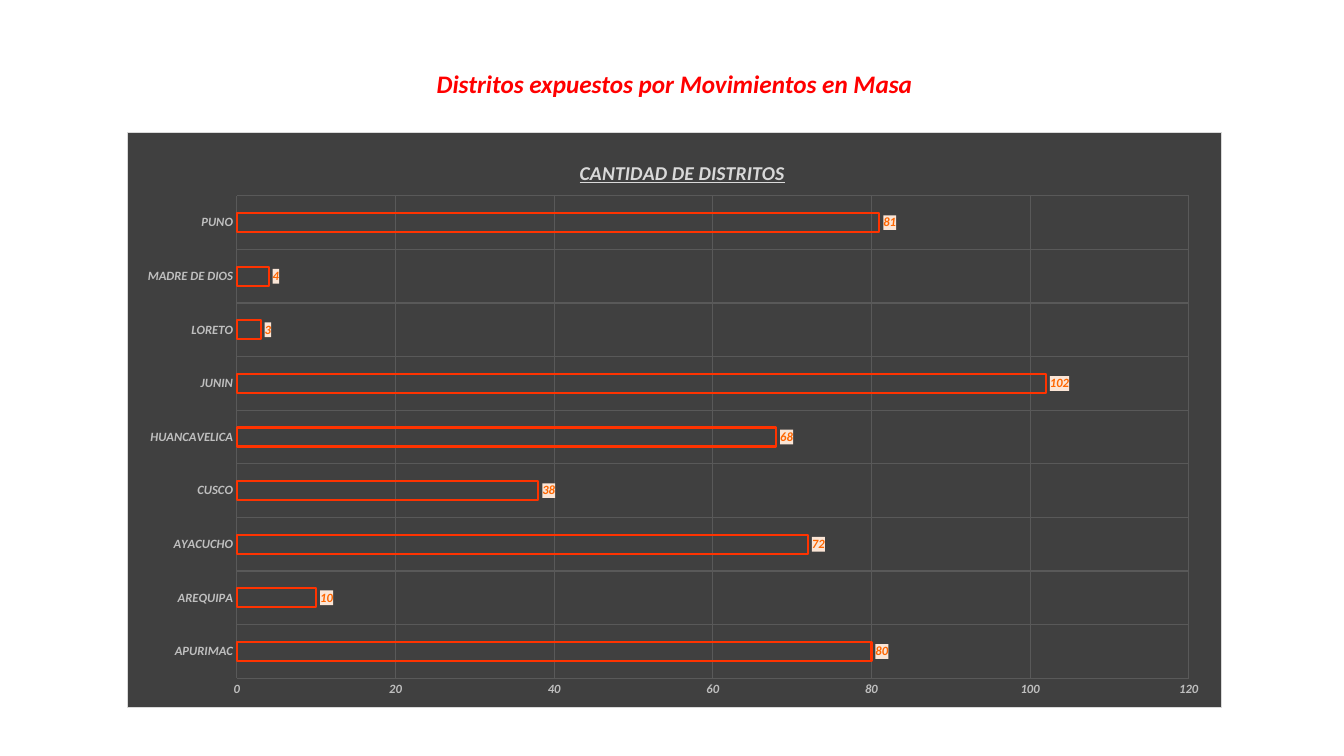
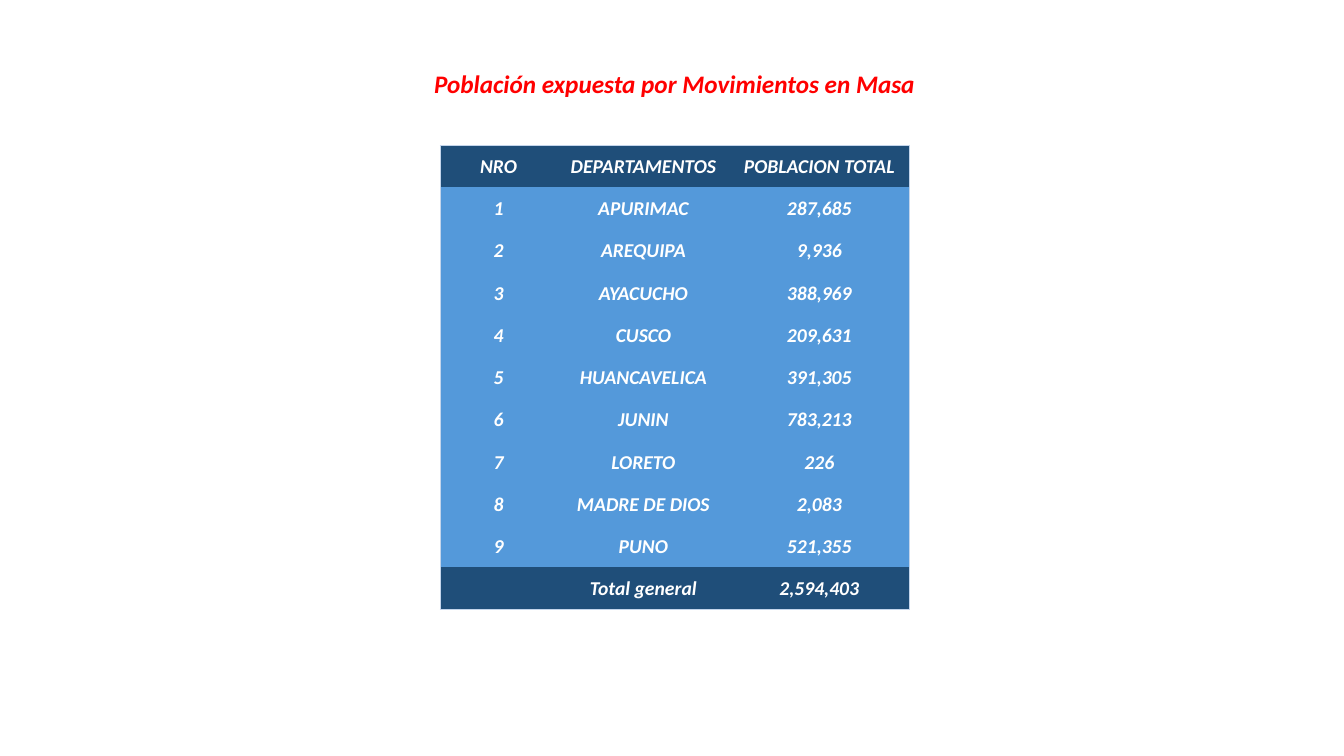
from lxml import etree
from pptx import Presentation
from pptx.chart.data import CategoryChartData
from pptx.dml.color import RGBColor
from pptx.enum.chart import XL_CHART_TYPE, XL_LABEL_POSITION, XL_TICK_MARK
from pptx.enum.text import MSO_ANCHOR, MSO_AUTO_SIZE, PP_ALIGN
from pptx.oxml import parse_xml
from pptx.oxml.ns import nsdecls, qn
from pptx.util import Cm, Pt

BAR = XL_CHART_TYPE.BAR_CLUSTERED
OUTSIDE = XL_LABEL_POSITION.OUTSIDE_END
NO_TICK = XL_TICK_MARK.NONE
MIDDLE = MSO_ANCHOR.MIDDLE
FIT_SHAPE = MSO_AUTO_SIZE.SHAPE_TO_FIT_TEXT
CENTER = PP_ALIGN.CENTER

FONT = "Calibri"
COLORS = {
    "title": "FF0000", "panel": "404040", "panel_line": "D9D9D9",
    "grid": "595959", "axis": "BFBFBF", "bar": "FF3300",
    "label": "FF6600", "label_fill": "FBE5D6", "band": "1F4E79",
    "body": "5499DA", "border": "C4D5EB", "white": "FFFFFF",
}
MID_X = 17.0

DEPARTMENTS = [
    ("APURIMAC", 80, "287,685"),
    ("AREQUIPA", 10, "9,936"),
    ("AYACUCHO", 72, "388,969"),
    ("CUSCO", 38, "209,631"),
    ("HUANCAVELICA", 68, "391,305"),
    ("JUNIN", 102, "783,213"),
    ("LORETO", 3, "226"),
    ("MADRE DE DIOS", 4, "2,083"),
    ("PUNO", 81, "521,355"),
]


def rgb(name):
    """Return the palette colour with this name."""
    return RGBColor.from_string(COLORS[name])


def style_font(font, size, color, underline=None):
    """Apply the shared bold italic face to a font."""
    font.name, font.size = FONT, Pt(size)
    font.bold = font.italic = True
    font.underline = underline
    font.color.rgb = rgb(color)


def write(tf, text, size=14, color="white", underline=None):
    """Write one centred line into a text frame."""
    p = tf.paragraphs[0]
    p.alignment = CENTER
    if text:
        r = p.add_run()
        r.text = text
        style_font(r.font, size, color, underline)


def add_title(s, text, top=1.6, width=12.7, height=1.02):
    """Place the slide title around the common centre line."""
    box = s.shapes.add_textbox(Cm(MID_X - width / 2), Cm(top), Cm(width), Cm(height))
    tf = box.text_frame
    tf.word_wrap = False
    tf.auto_size = FIT_SHAPE
    write(tf, text, size=18, color="title")


def fill_xml(color):
    """Return a solid fill element as text."""
    return f'<a:solidFill><a:srgbClr val="{COLORS[color]}"/></a:solidFill>'


def chart_sppr(fill, line=None):
    """Build the shape properties of a chart part."""
    inner = f'<a:ln w="9525">{fill_xml(line)}</a:ln>' if line else "<a:ln><a:noFill/></a:ln>"
    return parse_xml(f'<c:spPr {nsdecls("c", "a")}>{fill_xml(fill)}{inner}</c:spPr>')


def manual_layout(x, y, w=None, h=None):
    """Build a layout given in fractions of the chart."""
    layout = etree.Element(qn("c:layout"))
    manual = etree.SubElement(layout, qn("c:manualLayout"))
    values = [("xMode", "edge"), ("yMode", "edge"), ("x", x), ("y", y)]
    if w:
        values = [("layoutTarget", "inner")] + values + [("w", w), ("h", h)]
    for tag, value in values:
        etree.SubElement(manual, qn(f"c:{tag}")).set("val", str(value))
    return layout


def style_axis(axis):
    """Give an axis its grid, hidden line and text."""
    axis.has_major_gridlines = True
    grid = axis.major_gridlines.format.line
    grid.width = Pt(0.75)
    grid.color.rgb = rgb("grid")
    axis.major_tick_mark = axis.minor_tick_mark = NO_TICK
    axis.format.line.fill.background()
    style_font(axis.tick_labels.font, 9, "axis")


def style_labels(plot):
    """Show values beyond the bar ends on a pale fill."""
    plot.has_data_labels = True
    labels = plot.data_labels
    labels.show_value = True
    labels.number_format, labels.number_format_is_linked = "#,##0", False
    labels.position = OUTSIDE
    style_font(labels.font, 9, "label")
    num_fmt = plot._element.find(qn("c:dLbls")).find(qn("c:numFmt"))
    num_fmt.addnext(chart_sppr("label_fill"))


def add_district_chart(s, top=3.33, width=27.6, height=14.5):
    """Place the bar chart of districts on its dark panel."""
    data = CategoryChartData(number_format="#,##0")
    data.categories = [name for name, _, _ in DEPARTMENTS]
    data.add_series("Series 1", [count for _, count, _ in DEPARTMENTS])
    chart = s.shapes.add_chart(
        BAR, Cm(MID_X - width / 2), Cm(top), Cm(width), Cm(height), data).chart
    chart.has_legend = False
    chart.font.name, chart.font.size = FONT, Pt(10)
    chart.has_title = True
    write(chart.chart_title.text_frame, "CANTIDAD DE DISTRITOS",
          color="panel_line", underline=True)
    chart.chart_title.include_in_layout = False

    root = chart._chartSpace.find(qn("c:chart"))
    root.addnext(chart_sppr("panel", "panel_line"))
    for tag, layout in (("title", manual_layout(0.41, 0.04)),
                        ("plotArea", manual_layout(0.1, 0.11, 0.87, 0.84))):
        part = root.find(qn(f"c:{tag}"))
        for old in part.findall(qn("c:layout")):
            part.remove(old)
        part.insert(1 if tag == "title" else 0, layout)

    style_axis(chart.category_axis)
    axis = chart.value_axis
    style_axis(axis)
    axis.minimum_scale, axis.maximum_scale, axis.major_unit = 0, 120, 20
    axis.tick_labels.number_format = "#,##0"
    axis.tick_labels.number_format_is_linked = False

    plot = chart.plots[0]
    plot.gap_width, plot.overlap, plot.vary_by_categories = 182, -50, False
    bars = plot.series[0].format
    bars.fill.background()
    bars.line.width = Pt(1.5)
    bars.line.color.rgb = rgb("bar")
    style_labels(plot)


def set_borders(cell, outer):
    """Draw the named sides of a cell and clear the rest."""
    tc_pr = cell._tc.get_or_add_tcPr()
    for i, side in enumerate("LRTB"):
        paint = fill_xml("border") if side in outer else "<a:noFill/>"
        tc_pr.insert(i, parse_xml(
            f'<a:ln{side} {nsdecls("a")} w="6350">{paint}</a:ln{side}>'))


def add_population_table(s, top=3.66, widths=(2.95, 4.35, 4.52), height=11.71):
    """Place the population table around the common centre line."""
    rows = [("NRO", "DEPARTAMENTOS", "POBLACION TOTAL")]
    rows += [(str(i), name, people) for i, (name, _, people) in enumerate(DEPARTMENTS, 1)]
    rows.append(("", "Total general", "2,594,403"))
    last_row, last_col = len(rows) - 1, len(widths) - 1
    width = sum(widths)
    table = s.shapes.add_table(len(rows), len(widths), Cm(MID_X - width / 2),
                               Cm(top), Cm(width), Cm(height)).table
    for column, w in zip(table.columns, widths):
        column.width = Cm(w)
    for i, row in enumerate(rows):
        for j, text in enumerate(row):
            cell = table.cell(i, j)
            cell.vertical_anchor = MIDDLE
            cell.margin_left = cell.margin_right = cell.margin_top = Cm(0.02)
            cell.margin_bottom = 0
            cell.fill.solid()
            cell.fill.fore_color.rgb = rgb("band" if i in (0, last_row) else "body")
            write(cell.text_frame, text)
            edges = {"L": j == 0, "R": j == last_col, "T": i == 0, "B": i == last_row}
            set_borders(cell, [side for side, on in edges.items() if on])


def main():
    """Build the deck and save it."""
    prs = Presentation()
    prs.slide_width, prs.slide_height = Cm(33.87), Cm(19.05)
    for title, add_content in (
            ("Distritos expuestos por Movimientos en Masa", add_district_chart),
            ("Población expuesta por Movimientos en Masa", add_population_table)):
        s = prs.slides.add_slide(prs.slide_layouts[6])
        add_title(s, title)
        add_content(s)
    prs.save("out.pptx")


if __name__ == "__main__":
    main()
